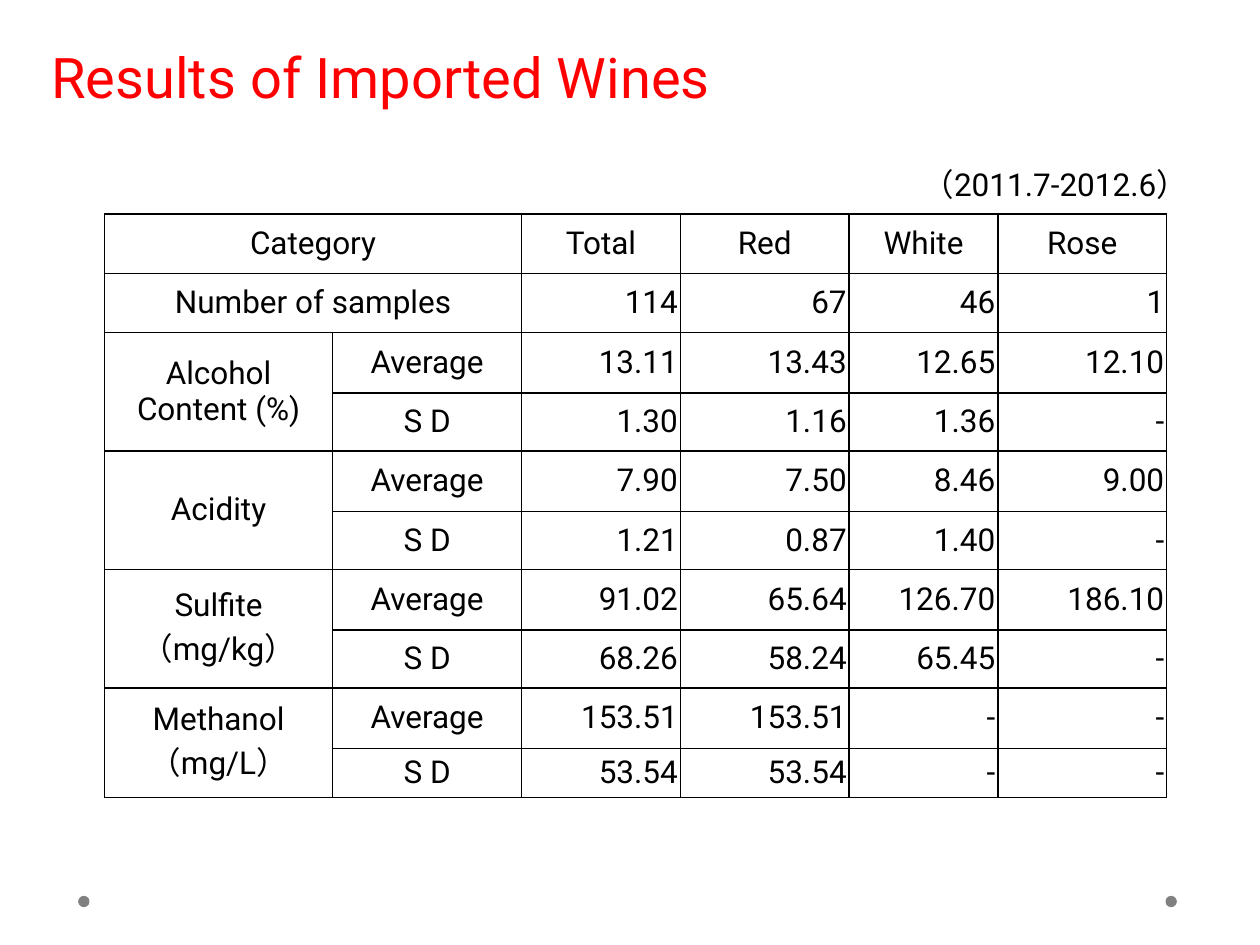
from dataclasses import dataclass

from lxml.etree import SubElement
from pptx import Presentation
from pptx.dml.color import RGBColor
from pptx.enum.shapes import MSO_SHAPE
from pptx.enum.text import MSO_ANCHOR, PP_ALIGN
from pptx.oxml.ns import qn
from pptx.util import Inches, Pt

GRID_COLUMNS, GRID_ROWS = 100, 75


@dataclass(frozen=True)
class Theme:
    font: str = "Roboto"
    title_size: int = 32
    body_size: int = 18
    title_color: str = "FF0000"
    text_color: str = "000000"
    border_color: str = "000000"
    dot_color: str = "808080"
    border_width: int = 1
    cell_margin: float = 0.02


class SlideBuilder:
    """Places styled elements on a slide; lengths are grid columns and rows."""

    def __init__(self, presentation, theme):
        self.theme = theme
        self.column = presentation.slide_width / GRID_COLUMNS
        self.row = presentation.slide_height / GRID_ROWS
        self.slide = presentation.slides.add_slide(presentation.slide_layouts[6])

    def box(self, left, top, width, height):
        return (round(left * self.column), round(top * self.row),
                round(width * self.column), round(height * self.row))

    def style_text(self, paragraph, text, size, color, alignment):
        paragraph.text = text
        paragraph.alignment = alignment
        paragraph.font.name = self.theme.font
        paragraph.font.size = Pt(size)
        paragraph.font.color.rgb = RGBColor.from_string(color)

    def text(self, text, place, size, color, alignment=PP_ALIGN.LEFT):
        frame = self.slide.shapes.add_textbox(*self.box(*place)).text_frame
        frame.word_wrap = True
        self.style_text(frame.paragraphs[0], text, size, color, alignment)

    def dot(self, left, top, diameter):
        shape = self.slide.shapes.add_shape(
            MSO_SHAPE.OVAL, *self.box(left, top, diameter, diameter))
        shape.shadow.inherit = False
        shape.fill.solid()
        shape.fill.fore_color.rgb = RGBColor.from_string(self.theme.dot_color)
        shape.line.fill.background()

    def border(self, cell):
        properties = cell._tc.get_or_add_tcPr()
        for index, side in enumerate(("a:lnL", "a:lnR", "a:lnT", "a:lnB")):
            line = properties.makeelement(
                qn(side), {"w": str(Pt(self.theme.border_width))})
            properties.insert(index, line)
            fill = SubElement(line, qn("a:solidFill"))
            SubElement(fill, qn("a:srgbClr"), val=self.theme.border_color)

    def table(self, rows, left, top, widths, heights, merges, label_columns):
        place = self.box(left, top, sum(widths), sum(heights))
        table = self.slide.shapes.add_table(len(rows), len(widths), *place).table
        table.first_row = table.horz_banding = False
        for column, width in zip(table.columns, widths):
            column.width = round(width * self.column)
        for row, height in zip(table.rows, heights):
            row.height = round(height * self.row)
        for first, last in merges:
            table.cell(*first).merge(table.cell(*last))
        for row_index, values in enumerate(rows):
            for column_index, value in enumerate(values):
                cell = table.cell(row_index, column_index)
                cell.margin_left = cell.margin_right = Inches(self.theme.cell_margin)
                cell.margin_top = cell.margin_bottom = Inches(self.theme.cell_margin)
                cell.vertical_anchor = MSO_ANCHOR.MIDDLE
                cell.fill.background()
                self.border(cell)
                is_label = row_index == 0 or column_index < label_columns
                self.style_text(cell.text_frame.paragraphs[0], value,
                                self.theme.body_size, self.theme.text_color,
                                PP_ALIGN.CENTER if is_label else PP_ALIGN.RIGHT)


# Wine results: each measure has an average row and a deviation row
HEADINGS = ["Category", "", "Total", "Red", "White", "Rose"]
SAMPLES = ["Number of samples", "", "114", "67", "46", "1"]
MEASURES = {
    "Alcohol Content (%)": (["13.11", "13.43", "12.65", "12.10"],
                            ["1.30", "1.16", "1.36", "-"]),
    "Acidity": (["7.90", "7.50", "8.46", "9.00"],
                ["1.21", "0.87", "1.40", "-"]),
    "Sulfite\n（mg/kg）": (["91.02", "65.64", "126.70", "186.10"],
                         ["68.26", "58.24", "65.45", "-"]),
    "Methanol（mg/L）": (["153.51", "153.51", "-", "-"],
                       ["53.54", "53.54", "-", "-"]),
}


def main():
    presentation = Presentation()
    presentation.slide_width, presentation.slide_height = Inches(10), Inches(7.5)
    theme = Theme()
    builder = SlideBuilder(presentation, theme)

    # Footer dots
    for left in (92.5, 6.2):
        builder.dot(left, 71.1, 0.9)

    # Results table
    rows = [HEADINGS, SAMPLES]
    merges = [((0, 0), (0, 1)), ((1, 0), (1, 1))]
    for measure, (averages, deviations) in MEASURES.items():
        first = len(rows)
        merges.append(((first, 0), (first + 1, 0)))
        rows += [[measure, "Average", *averages], ["", "S D", *deviations]]
    builder.table(rows, left=8.3, top=17,
                  widths=[18.1, 15, 12.6, 13.4, 11.8, 13.4],
                  heights=[4.7, 4.7] + [4.8, 4.6] * 3 + [4.8, 3.9],
                  merges=merges, label_columns=2)

    # Survey period and title
    builder.text("（2011.7-2012.6）", (69.2, 12.6, 29.1, 4),
                 theme.body_size, theme.text_color, PP_ALIGN.CENTER)
    builder.text("Results of Imported Wines", (3.1, 2.9, 96.9, 6.4),
                 theme.title_size, theme.title_color)

    presentation.save("out.pptx")


if __name__ == "__main__":
    main()
